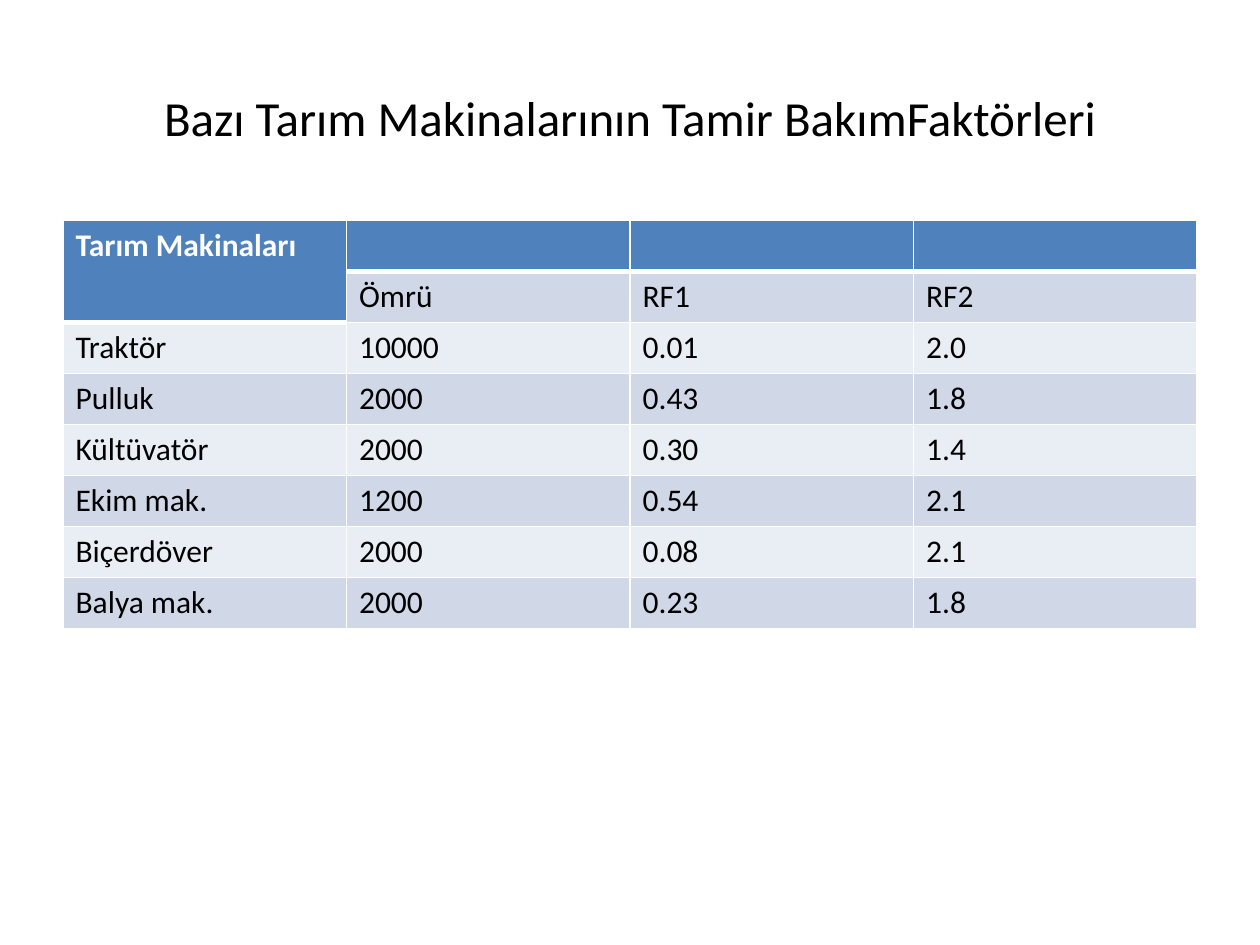
import pptx
import pptx.dml.color
import pptx.enum.text
import pptx.oxml
import pptx.oxml.ns
import pptx.util

Inches = pptx.util.Inches

# Content
title = "Bazı Tarım Makinalarının Tamir BakımFaktörleri"
rows = [
    ("Tarım Makinaları", "", "", ""),
    ("", "Ömrü", "RF1", "RF2"),
    ("Traktör", "10000", "0.01", "2.0"),
    ("Pulluk", "2000", "0.43", "1.8"),
    ("Kültüvatör", "2000", "0.30", "1.4"),
    ("Ekim mak.", "1200", "0.54", "2.1"),
    ("Biçerdöver", "2000", "0.08", "2.1"),
    ("Balya mak.", "2000", "0.23", "1.8"),
]
blue, bands = "4F81BD", ("E9EDF4", "D0D8E8")
black, white = "000000", "FFFFFF"


def color(code):
    return pptx.dml.color.RGBColor.from_string(code)


def style(para, size, code, bold=False):
    font = para.font
    font.name, font.size, font.bold = "Calibri", pptx.util.Pt(size), bold
    font.color.rgb = color(code)


def border(cell, side, width):
    cell._tc.get_or_add_tcPr().append(pptx.oxml.parse_xml(
        f'<a:ln{side} {pptx.oxml.ns.nsdecls("a")} w="{pptx.util.Pt(width)}">'
        f'<a:solidFill><a:srgbClr val="{white}"/></a:solidFill></a:ln{side}>'))


def is_head(row, col):
    return row == 0 or (row, col) == (1, 0)


deck = pptx.Presentation()
deck.slide_width, deck.slide_height = Inches(10), Inches(7.5)
slide = deck.slides.add_slide(deck.slide_layouts[6])

# Title
box = slide.shapes.add_textbox(Inches(0.5), Inches(0.3), Inches(9), Inches(1.25))
frame = box.text_frame
frame.word_wrap = True
frame.vertical_anchor = pptx.enum.text.MSO_ANCHOR.MIDDLE
para = frame.paragraphs[0]
para.text = title
para.alignment = pptx.enum.text.PP_ALIGN.CENTER
style(para, 28, black)

# Table
table = slide.shapes.add_table(len(rows), len(rows[0]), Inches(0.5),
                               Inches(1.75), Inches(9), Inches(3.24)).table
table.cell(0, 0).merge(table.cell(1, 0))
for r, row in enumerate(rows):
    for c, text in enumerate(row):
        cell, head = table.cell(r, c), is_head(r, c)
        if text:
            cell.text = text
        style(cell.text_frame.paragraphs[0], 18, white if head else black, head)

        # Thick rule under the header
        above = r > 0 and is_head(r - 1, c) and not head
        for side, thick in (("L", False), ("R", False), ("T", above), ("B", head)):
            border(cell, side, 3 if thick else 1)
        cell.fill.solid()
        cell.fill.fore_color.rgb = color(blue if head else bands[r % 2])

deck.save("out.pptx")
